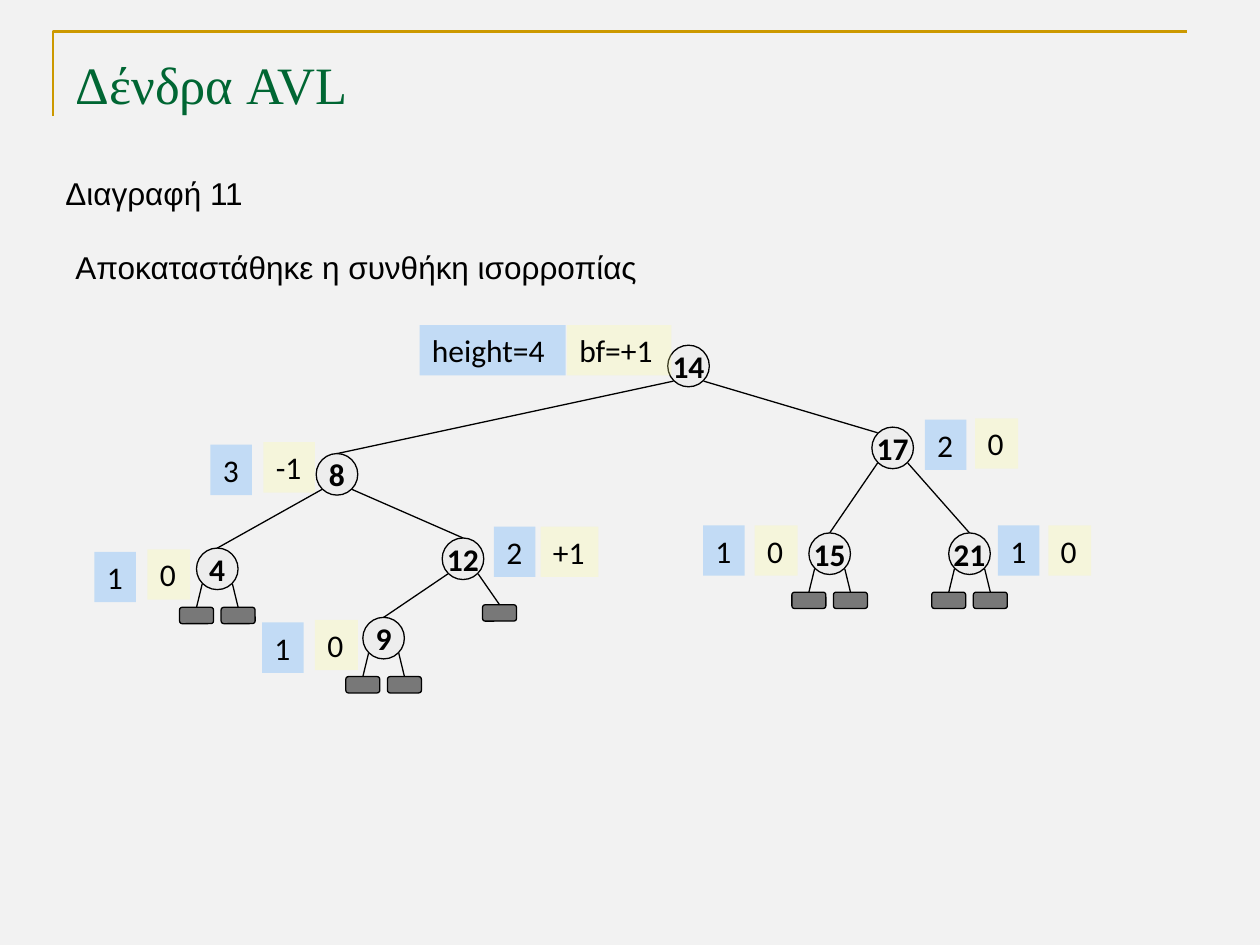
import dataclasses

import lxml.etree
import pptx
import pptx.dml.color
import pptx.enum.shapes
import pptx.enum.text
import pptx.oxml.ns
import pptx.util

Inches = pptx.util.Inches
SHAPES = pptx.enum.shapes.MSO_SHAPE
ANCHOR = pptx.enum.text.MSO_ANCHOR
ALIGN = pptx.enum.text.PP_ALIGN
AUTO_SIZE = pptx.enum.text.MSO_AUTO_SIZE


@dataclasses.dataclass(frozen=True)
class Theme:
    page: str = "F2F2F2"
    frame: str = "CC9900"
    title: str = "006633"
    ink: str = "000000"
    node: str = "EAEAEA"
    height: str = "3399FF"
    balance: str = "FFFF99"
    node_alpha: int = 60
    leaf_alpha: int = 50
    label_alpha: int = 25
    title_font: str = "Times New Roman"
    body_font: str = "Arial"
    tree_font: str = "Calibri"
    title_size: int = 30
    text_size: int = 18
    frame_width: float = 1.5
    line_width: float = 0.75


@dataclasses.dataclass(frozen=True)
class Box:
    left: float
    top: float
    width: float
    height: float

    def inside(self, left, top, width, height):
        return Box(self.left + left, self.top + top, width, height)

    def lengths(self):
        return [Inches(value) for value in dataclasses.astuple(self)]


@dataclasses.dataclass(frozen=True)
class Node:
    left: float
    top: float
    height: str
    height_at: tuple
    balance: str
    balance_at: tuple
    parent: str = ""
    side: int = 0
    leaves: tuple = ()
    leaf_drop: float = 0.47


THEME = Theme()
NODE_SIZE = 0.33
DIAGONAL = 0.12
LEAF_WIDTH, LEAF_HEIGHT = 0.27, 0.13
LABEL_HEIGHT = 0.4
HEIGHT_WIDTHS = {"height=4": 1.16}
BALANCE_WIDTHS = {"bf=+1": 0.83, "+1": 0.46, "-1": 0.41}
BOTH = (-1, 1)

NODES = {
    "14": Node(4.55, 0.16, "height=4", (2.58, 0), "bf=+1", (3.75, 0)),
    "8": Node(1.76, 1.02, "3", (0.92, 0.95), "-1", (1.34, 0.93), "14", -1),
    "17": Node(6.17, 0.81, "2", (6.59, 0.75), "0", (6.99, 0.74), "14", 1),
    "4": Node(0.81, 1.77, "1", (0, 1.8), "0", (0.42, 1.78), "8", -1, BOTH),
    "12": Node(2.76, 1.69, "2", (3.17, 1.6), "+1", (3.54, 1.6), "8", 1, (1,), 0.53),
    "9": Node(2.13, 2.32, "1", (1.33, 2.36), "0", (1.75, 2.34), "12", -1, BOTH),
    "15": Node(5.67, 1.65, "1", (4.83, 1.59), "0", (5.24, 1.59), "17", -1, BOTH),
    "21": Node(6.78, 1.65, "1", (7.17, 1.59), "0", (7.57, 1.59), "17", 1, BOTH),
}


def color(value):
    return pptx.dml.color.RGBColor.from_string(value)


def write(frame, text, font=THEME.tree_font, size=THEME.text_size,
          ink=THEME.ink, bold=False, align=ALIGN.LEFT, wrap=False):
    frame.word_wrap = wrap
    para = frame.paragraphs[0]
    para.alignment = align
    span = para.add_run()
    span.text = text
    span.font.name = font
    span.font.size = pptx.util.Pt(size)
    span.font.color.rgb = color(ink)
    span.font.bold = bold


def add_shape(page, kind, box, fill, alpha, outline=True):
    shape = page.shapes.add_shape(kind, *box.lengths())
    shape.shadow.inherit = False
    shape.fill.solid()
    shape.fill.fore_color.rgb = color(fill)
    qn = pptx.oxml.ns.qn
    tint = shape._element.spPr.find(qn("a:solidFill"))[0]
    lxml.etree.SubElement(tint, qn("a:alpha")).set("val", str(alpha * 1000))
    if outline:
        shape.line.color.rgb = color(THEME.ink)
        shape.line.width = pptx.util.Pt(THEME.line_width)
    else:
        shape.line.fill.background()
    return shape


def add_line(page, start, end):
    line = page.shapes.add_connector(
        pptx.enum.shapes.MSO_CONNECTOR.STRAIGHT,
        *[Inches(value) for value in (*start, *end)])
    line.line.color.rgb = color(THEME.ink)
    line.line.width = pptx.util.Pt(THEME.line_width)
    lxml.etree.SubElement(line._element.spPr, pptx.oxml.ns.qn("a:effectLst"))


def add_label(page, box, text, fill):
    label = add_shape(page, SHAPES.RECTANGLE, box, fill, THEME.label_alpha, outline=False)
    frame = label.text_frame
    frame.vertical_anchor = ANCHOR.TOP
    frame.auto_size = AUTO_SIZE.SHAPE_TO_FIT_TEXT
    write(frame, text, wrap="=" in text)


def draw_heading(page, box):
    left, top, width, height = box.lengths()
    builder = page.shapes.build_freeform(left, top + height, scale=1.0)
    builder.add_line_segments([(left, top), (left + width, top)], close=False)
    corner = builder.convert_to_shape()
    corner.shadow.inherit = False
    corner.fill.background()
    corner.line.color.rgb = color(THEME.frame)
    corner.line.width = pptx.util.Pt(THEME.frame_width)

    title = page.shapes.title
    title.left, title.top, title.width, title.height = box.inside(0.08, 0.05, 9, 0.53).lengths()
    frame = title.text_frame
    frame.auto_size = AUTO_SIZE.NONE
    frame.vertical_anchor = ANCHOR.TOP
    frame.margin_top = Inches(0.11)
    write(frame, "Δένδρα AVL", font=THEME.title_font, size=THEME.title_size,
          ink=THEME.title, wrap=True)


def draw_remarks(page, box):
    remarks = (
        ("Διαγραφή 11", box.inside(0, 0, 1.62, 0.4)),
        ("Αποκαταστάθηκε η συνθήκη ισορροπίας", box.inside(0.08, 0.59, 4.7, 0.4)),
    )
    for text, place in remarks:
        frame = page.shapes.add_textbox(*place.lengths()).text_frame
        frame.auto_size = AUTO_SIZE.SHAPE_TO_FIT_TEXT
        write(frame, text, font=THEME.body_font)


def draw_leaf(page, circle, side, drop):
    center = circle.left + NODE_SIZE / 2
    middle = circle.top + NODE_SIZE / 2
    reach = NODE_SIZE / 2 if drop < 0.5 else 0.29
    leaf_center, leaf_top = center + side * reach, circle.top + drop
    leaf = Box(leaf_center - LEAF_WIDTH / 2, leaf_top, LEAF_WIDTH, LEAF_HEIGHT)
    add_shape(page, SHAPES.ROUNDED_RECTANGLE, leaf, THEME.ink, THEME.leaf_alpha)
    add_line(page, (leaf_center, leaf_top), (center + side * DIAGONAL, middle + DIAGONAL))


def draw_tree(page, box):
    circles = {key: box.inside(node.left, node.top, NODE_SIZE, NODE_SIZE)
               for key, node in NODES.items()}
    radius = NODE_SIZE / 2
    for key, node in NODES.items():
        circle = circles[key]
        if node.parent:
            parent = circles[node.parent]
            start = (parent.left + radius + node.side * DIAGONAL,
                     parent.top + radius + DIAGONAL)
            end = (circle.left + radius, circle.top)
            if key == "17":
                end = (end[0] - DIAGONAL, end[1] + radius - DIAGONAL)
            add_line(page, start, end)
        for side in node.leaves:
            draw_leaf(page, circle, side, node.leaf_drop)
        shape = add_shape(page, SHAPES.OVAL, circle, THEME.node, THEME.node_alpha)
        shape.text_frame.vertical_anchor = ANCHOR.MIDDLE
        write(shape.text_frame, key, bold=True, align=ALIGN.CENTER)
    for node in NODES.values():
        balance_width = BALANCE_WIDTHS.get(node.balance, 0.34)
        height_width = HEIGHT_WIDTHS.get(node.height, 0.33)
        add_label(page, box.inside(*node.balance_at, balance_width, LABEL_HEIGHT),
                  node.balance, THEME.balance)
        add_label(page, box.inside(*node.height_at, height_width, LABEL_HEIGHT),
                  node.height, THEME.height)


def main():
    deck = pptx.Presentation()
    deck.slide_width, deck.slide_height = Inches(10), Inches(7.5)
    page = deck.slides.add_slide(deck.slide_layouts[5])
    page.background.fill.solid()
    page.background.fill.fore_color.rgb = color(THEME.page)
    draw_heading(page, Box(0.42, 0.25, 9, 0.67))
    draw_tree(page, Box(0.75, 2.58, 7.91, 2.92))
    draw_remarks(page, Box(0.42, 1.33, 4.78, 0.99))
    deck.save("out.pptx")


if __name__ == "__main__":
    main()
